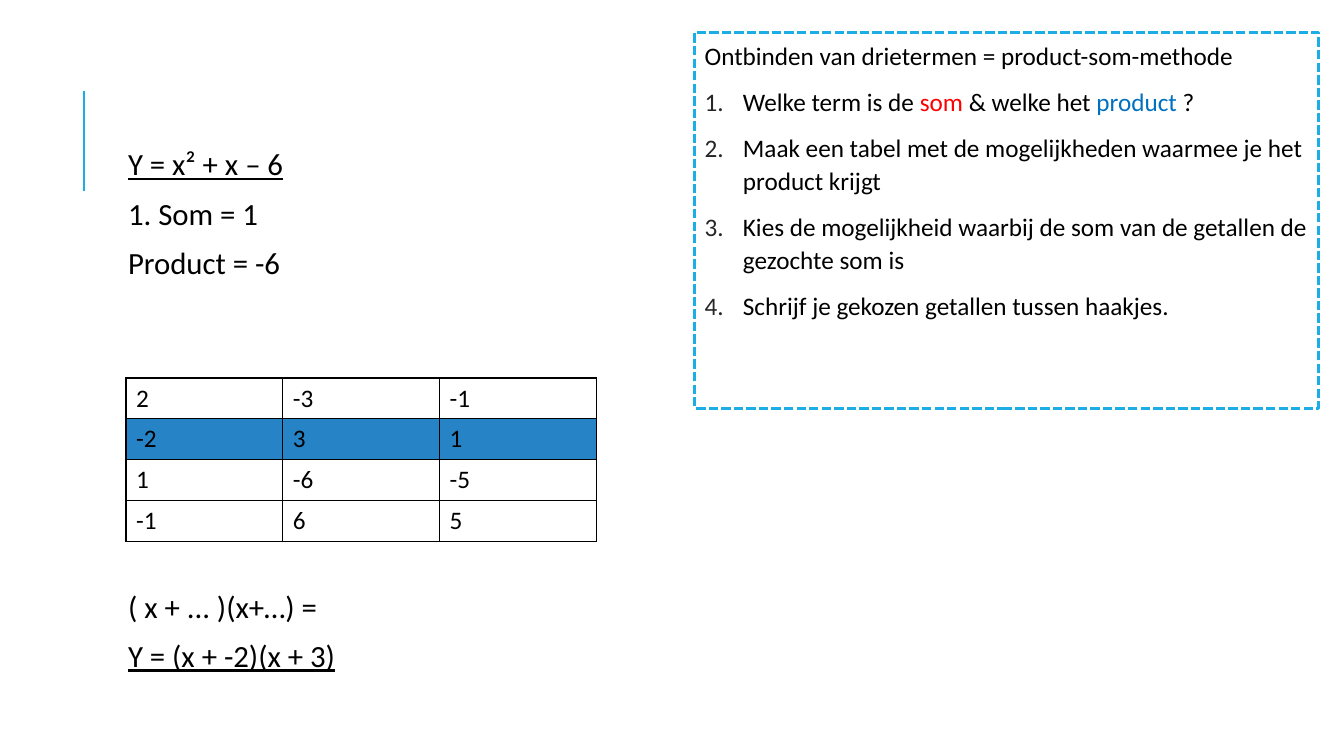
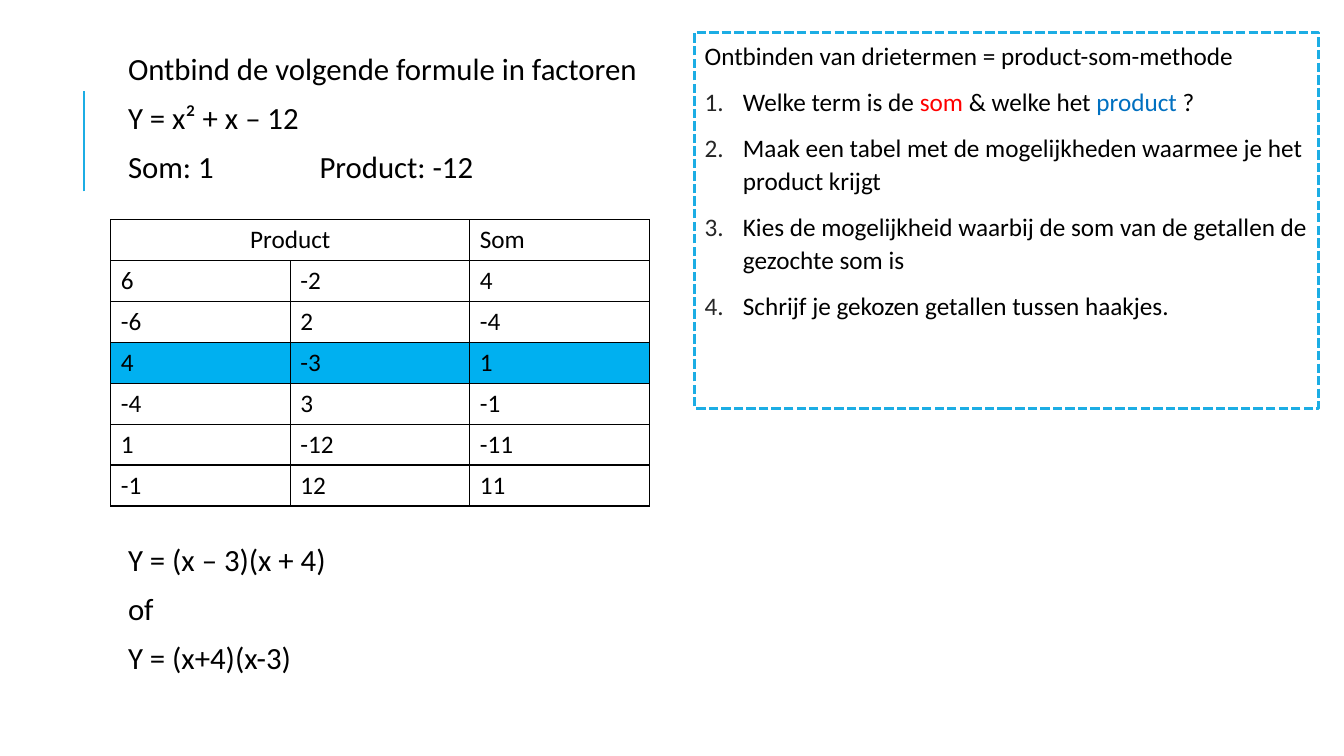
from lxml.etree import SubElement
from pptx import Presentation
from pptx.dml.color import RGBColor
from pptx.enum.dml import MSO_LINE
from pptx.enum.shapes import MSO_CONNECTOR, MSO_SHAPE
from pptx.enum.text import MSO_ANCHOR, MSO_AUTO_SIZE, PP_ALIGN
from pptx.oxml.ns import qn
from pptx.util import Inches, Pt

WIDTH, HEIGHT = 13.33, 7.5
COLUMN, ROW = WIDTH / 100, HEIGHT / 100
BODY_BOTTOM = 92
BODY_LINE = 35.1  # points from one body line to the next

FONT = "Calibri"
BLACK, ACCENT, NUMBER = "000000", "1CADE4", "262626"
SUM_COLOR, PRODUCT_COLOR = "FF0000", "0070C0"
color = RGBColor.from_string

METHOD_TITLE = "Ontbinden van drietermen = product-som-methode"
METHOD_STEPS = [
    [("Welke term is de ", BLACK), ("som", SUM_COLOR), (" & welke het ", BLACK),
     ("product", PRODUCT_COLOR), (" ?", BLACK)],
    [("Maak een tabel met de mogelijkheden waarmee je het product krijgt", BLACK)],
    [("Kies de mogelijkheid waarbij de som van de getallen de gezochte som is", BLACK)],
    [("Schrijf je gekozen getallen tussen haakjes.", BLACK)],
]

# Each line: text, underlined, body lines left free above it
EXERCISES = [
    {
        "top": 19.47,
        "lines": [
            ("Y = x² + x – 6", True, 0),
            ("1. Som = 1", False, 0),
            ("Product = -6", False, 0),
            ("( x + ... )(x+…) =", False, 6),
            ("Y = (x + -2)(x + 3)", True, 0),
        ],
        "table_area": (9.38, 50, 35, 21.6),
        "rows": [(2, -3, -1), (-2, 3, 1), (1, -6, -5), (-1, 6, 5)],
        "answer": (-2, 3, 1),
        "answer_fill": "2683C6",
    },
    {
        "top": 6.8,
        "lines": [
            ("Ontbind de volgende formule in factoren", False, 0),
            ("Y = x² + x – 12", False, 0),
            ("Som: 1\t\tProduct: -12", False, 0),
            ("Y = (x – 3)(x + 4)", False, 7),
            ("of", False, 0),
            ("Y = (x+4)(x-3)", False, 0),
        ],
        "table_area": (8.25, 29.07, 40.05, 37.73),
        "rows": [("Product", None, "Som"), (6, -2, 4), (-6, 2, -4), (4, -3, 1),
                 (-4, 3, -1), (1, -12, -11), (-1, 12, 11)],
        "answer": (4, -3, 1),
        "answer_fill": "00B0F0",
    },
]


def write(para, spans, size, underline=False):
    """Fill a paragraph with (text, colour) spans."""
    for text, hex_color in spans:
        span = para.add_run()
        span.text = text
        span.font.name, span.font.size = FONT, Pt(size)
        span.font.underline = underline
        span.font.color.rgb = color(hex_color)


def add_bullet(para, indent, hex_color, kind, **attributes):
    """Give a paragraph a hanging bullet; its spacing must be set already."""
    properties = para._p.get_or_add_pPr()
    properties.set("marL", str(Inches(indent)))
    properties.set("indent", str(-Inches(indent)))
    properties.set("defTabSz", str(Inches(1)))
    bullet_color = SubElement(properties, qn("a:buClr"))
    SubElement(bullet_color, qn("a:srgbClr"), val=hex_color)
    SubElement(properties, qn(kind), **attributes)


deck = Presentation()
deck.slide_width, deck.slide_height = Inches(WIDTH), Inches(HEIGHT)

for exercise in EXERCISES:
    page = deck.slides.add_slide(deck.slide_layouts[1])
    title = page.shapes.title._element
    title.getparent().remove(title)

    # Accent line
    accent = page.shapes.add_connector(
        MSO_CONNECTOR.STRAIGHT, Inches(6.23 * COLUMN), Inches(25.33 * ROW),
        Inches(6.23 * COLUMN), Inches(12 * ROW))
    accent.line.color.rgb, accent.line.width = color(ACCENT), Pt(1.5)
    SubElement(accent._element.spPr, qn("a:effectLst"))

    # Worked exercise
    body = page.placeholders[1]
    body.left, body.top = Inches(8.4 * COLUMN), Inches(exercise["top"] * ROW)
    body.width = Inches(79.72 * COLUMN)
    body.height = Inches((BODY_BOTTOM - exercise["top"]) * ROW)
    frame = body.text_frame
    frame.auto_size, frame.vertical_anchor = MSO_AUTO_SIZE.NONE, MSO_ANCHOR.TOP
    frame.margin_left = frame.margin_right = Inches(0.05)
    frame.margin_top = frame.margin_bottom = Inches(0.05)
    for index, (text, underline, free_lines) in enumerate(exercise["lines"]):
        para = frame.add_paragraph() if index else frame.paragraphs[0]
        para.line_spacing, para.space_after = 0.8, Pt(2)
        para.space_before = Pt(12 + free_lines * BODY_LINE)
        add_bullet(para, 0.1, ACCENT, "a:buChar", char=" ")
        write(para, [(text, BLACK)], 22, underline)

    # Method box
    box = page.shapes.add_shape(
        MSO_SHAPE.RECTANGLE, Inches(51.69 * COLUMN), Inches(4.27 * ROW),
        Inches(46.42 * COLUMN), Inches(49.73 * ROW))
    box.shadow.inherit = False
    box.fill.background()
    box.line.color.rgb, box.line.width = color(ACCENT), Pt(2.25)
    box.line.dash_style = MSO_LINE.SQUARE_DOT
    frame = box.text_frame
    frame.word_wrap, frame.vertical_anchor = True, MSO_ANCHOR.TOP
    for index, spans in enumerate([[(METHOD_TITLE, BLACK)]] + METHOD_STEPS):
        para = frame.add_paragraph() if index else frame.paragraphs[0]
        para.alignment = PP_ALIGN.LEFT
        para.line_spacing, para.space_before = 1.1, Pt(9)
        if index:
            add_bullet(para, 0.38, NUMBER, "a:buAutoNum", type="arabicPeriod")
        write(para, spans, 18)

    # Table of factor pairs and their sums
    rows = exercise["rows"]
    left, top, width, height = exercise["table_area"]
    table = page.shapes.add_table(
        len(rows), len(rows[0]), Inches(left * COLUMN), Inches(top * ROW),
        Inches(width * COLUMN), Inches(height * ROW)).table
    table.first_row = table.horz_banding = False
    for row_index, values in enumerate(rows):
        for column_index, value in enumerate(values):
            cell = table.cell(row_index, column_index)
            properties = cell._tc.get_or_add_tcPr()
            for side in ("a:lnL", "a:lnR", "a:lnT", "a:lnB"):
                border = SubElement(properties, qn(side), w=str(Pt(1)))
                fill = SubElement(border, qn("a:solidFill"))
                SubElement(fill, qn("a:srgbClr"), val=BLACK)
            if values == exercise["answer"]:
                cell.fill.solid()
                cell.fill.fore_color.rgb = color(exercise["answer_fill"])
            else:
                cell.fill.background()
            if value is None:
                heading = table.cell(row_index, column_index - 1)
                heading.merge(cell)
                heading.text_frame.paragraphs[0].alignment = PP_ALIGN.CENTER
            else:
                write(cell.text_frame.paragraphs[0], [(str(value), BLACK)], 18)

deck.save("out.pptx")
